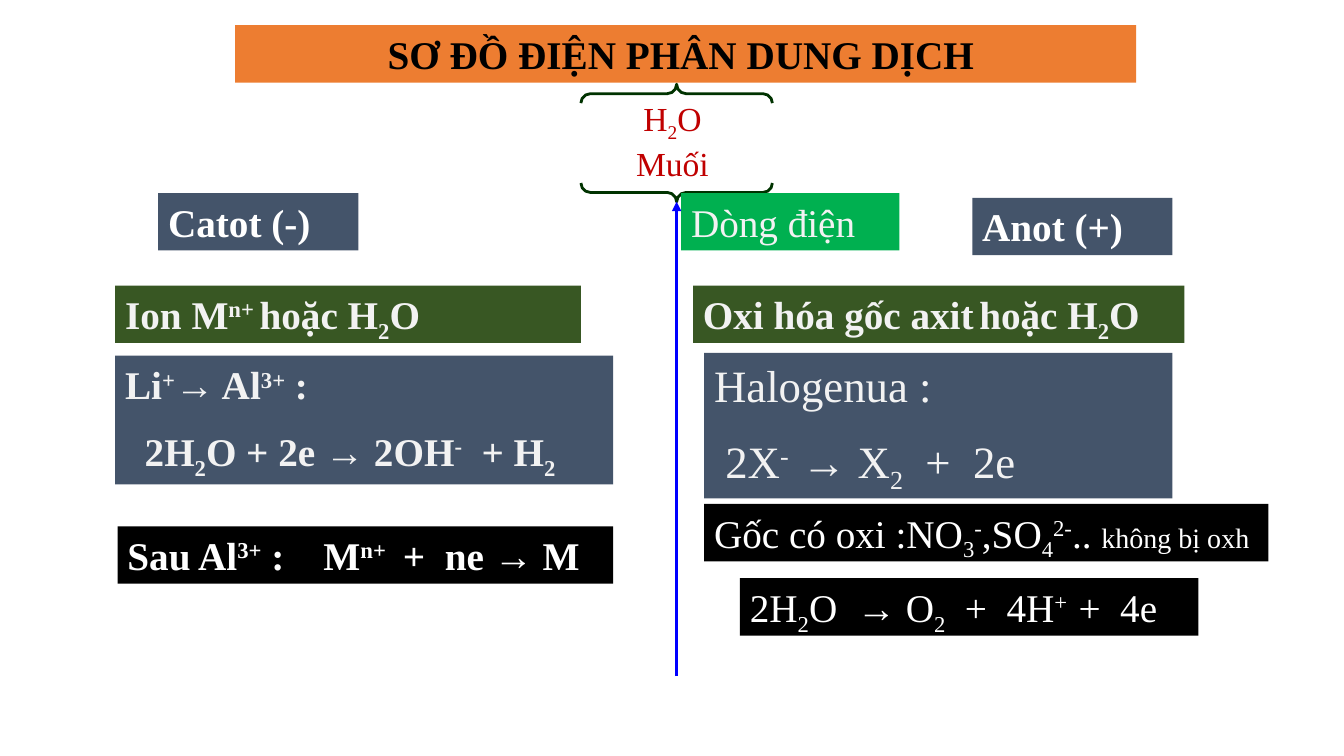
"""Build the slide that charts the electrolysis of a salt solution."""
import pptx
import pptx.dml.color
import pptx.enum.shapes
import pptx.enum.text
import pptx.oxml
import pptx.oxml.ns
import pptx.util

Pt = pptx.util.Pt
Shapes = pptx.enum.shapes.MSO_SHAPE
Align = pptx.enum.text.PP_ALIGN

WHITE, PALE, BLACK, RED = "FFFFFF", "F2F2F2", "000000", "C00000"
SLATE, FOREST, GREEN, ORANGE = "44546A", "385723", "00B050", "ED7D31"
BASELINES = {"^": "30000", "_": "-25000"}


def colour(value):
    return pptx.dml.color.RGBColor.from_string(value)


def paint(shape, fill):
    shape.fill.solid()
    shape.fill.fore_color.rgb = colour(fill)


def add_xml(parent, tag, **attributes):
    element = pptx.oxml.parse_xml(f"<a:{tag} {pptx.oxml.ns.nsdecls('a')}/>")
    for name, value in attributes.items():
        element.set(name, value)
    parent.append(element)
    return element


class Diagram:
    def __init__(self, presentation):
        self.font = "Times New Roman"
        self.slide = presentation.slides.add_slide(presentation.slide_layouts[5])

    def fill_text(self, shape, lines, ink, size=28, bold=False, align=Align.LEFT, indent=0, tab=0):
        frame = shape.text_frame
        frame.word_wrap = True
        frame.auto_size = pptx.enum.text.MSO_AUTO_SIZE.NONE
        frame.vertical_anchor = pptx.enum.text.MSO_ANCHOR.TOP
        frame.margin_left = frame.margin_right = Pt(7.2)
        frame.margin_top = frame.margin_bottom = Pt(3.6)
        for index, pieces in enumerate(lines):
            paragraph = frame.add_paragraph() if index else frame.paragraphs[0]
            paragraph.alignment = align
            paragraph.space_before = Pt(size / 2 if index else 0)
            properties = paragraph._p.get_or_add_pPr()
            if index and indent:
                properties.set("marL", str(Pt(indent)))
                properties.set("indent", "0")
            if tab:
                add_xml(add_xml(properties, "tabLst"), "tab", pos=str(Pt(tab)), algn="l")
            for piece in pieces:
                self.add_run(paragraph, piece, ink, size, bold)

    def add_run(self, paragraph, piece, ink, size, bold):
        if isinstance(piece, tuple):
            piece, size = piece
        run = paragraph.add_run()
        run.text = piece[1:] if piece[0] in BASELINES else piece
        run.font.name = self.font
        run.font.size = Pt(size)
        run.font.bold = bold
        run.font.color.rgb = colour(ink)
        if piece[0] in BASELINES:
            run._r.get_or_add_rPr().set("baseline", BASELINES[piece[0]])

    def title(self, box, text, fill, ink):
        shape = self.slide.shapes.title
        shape.left, shape.top, shape.width, shape.height = map(Pt, box)
        paint(shape, fill)
        self.fill_text(shape, [[text]], ink, bold=True, align=Align.CENTER)

    def label(self, box, pieces, ink):
        shape = self.slide.shapes.add_textbox(*map(Pt, box))
        self.fill_text(shape, [pieces], ink, size=24, align=Align.CENTER)

    def panel(self, box, fill, lines, ink, **style):
        shape = self.slide.shapes.add_shape(Shapes.RECTANGLE, *map(Pt, box))
        shape.shadow.inherit = False
        paint(shape, fill)
        shape.line.fill.background()
        self.fill_text(shape, lines, ink, **style)

    def braces(self, box, ink):
        shape = self.slide.shapes.add_shape(Shapes.DOUBLE_BRACE, *map(Pt, box))
        shape.shadow.inherit = False
        shape.rotation = 90
        shape.adjustments[0] = 0.08
        shape.fill.background()
        shape.line.color.rgb = colour(ink)
        shape.line.width = Pt(2)

    def arrow(self, start, end, ink):
        connector = self.slide.shapes.add_connector(
            pptx.enum.shapes.MSO_CONNECTOR.STRAIGHT, *map(Pt, start + end))
        connector.line.color.rgb = colour(ink)
        connector.line.width = Pt(2.25)
        add_xml(connector.line._get_or_add_ln(), "tailEnd", type="triangle")
        add_xml(connector._element.spPr, "effectLst")


def main():
    presentation = pptx.Presentation()
    presentation.slide_width, presentation.slide_height = Pt(960), Pt(540)
    diagram = Diagram(presentation)
    row = 41

    diagram.title((168, 18, 643.5, row), "SƠ ĐỒ ĐIỆN PHÂN DUNG DỊCH ", ORANGE, BLACK)
    diagram.braces((441.3, 33.8, 84, 136.8), "003300")
    diagram.label((447.7, 66.2, 71.3, 36), ["H", "_2", "O "], RED)
    diagram.label((431.5, 98.6, 103.7, 36), ["Muối "], RED)
    diagram.panel((486.5, 138, 156, row), GREEN, [["Dòng điện"]], PALE)
    diagram.arrow((483.3, 483), (483.3, 144), "0000FF")

    diagram.panel((113, 138, 143, row), SLATE, [["Catot (-)"]], WHITE, bold=True)
    diagram.panel((82.3, 204, 332.7, row), FOREST,
                  [["Ion M", "^n+ ", "hoặc H", "_2", "O"]], PALE, bold=True)
    diagram.panel((82.3, 254, 355.7, 92), SLATE,
                  [["Li", "^+", "→ Al", "^3+", " :"],
                   ["2H", "_2", "O + 2e → 2OH", "^-", "  + H", "_2"]],
                  PALE, bold=True, indent=14)
    diagram.panel((84, 376, 354, row), BLACK,
                  [["Sau Al", "^3+", " :\tM", "^n+   ", "+  ne → M"]],
                  WHITE, bold=True, tab=140)

    diagram.panel((694.5, 141.3, 143, row), SLATE, [["Anot (+)"]], WHITE, bold=True)
    diagram.panel((495, 204, 351, row), FOREST,
                  [["Oxi hóa gốc axit", "^ ", "hoặc H", "_2", "O"]], PALE, bold=True)
    diagram.panel((503, 252, 334.5, 104), SLATE,
                  [["Halogenua :"], ["2X", "^-  ", "→ X", "_2", "  +  2e"]],
                  PALE, size=32, indent=8)
    diagram.panel((503, 360, 403, row), BLACK,
                  [["Gốc có oxi :NO", "_3", "^-", ",SO", "_4", "^2-", ".. ",
                    ("không bị oxh", 20)]], WHITE)
    diagram.panel((528.5, 413, 327.5, row), BLACK,
                  [["2H", "_2", "O  → O", "_2", "  +  4H", "^+  ", "+  4e"]], WHITE)

    presentation.save("out.pptx")


if __name__ == "__main__":
    main()
